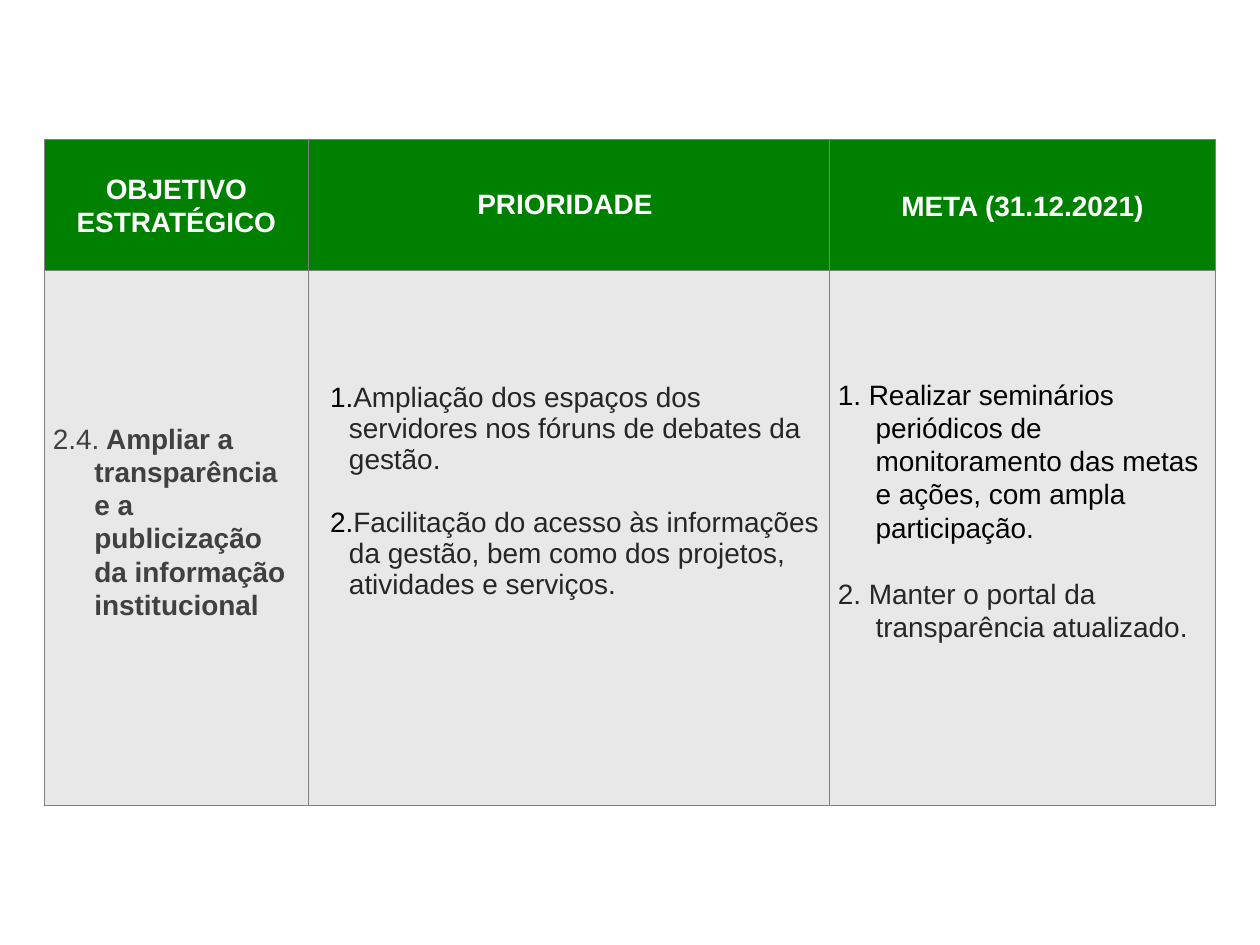
from dataclasses import dataclass

from lxml import etree
from pptx import Presentation
from pptx.dml.color import RGBColor
from pptx.enum.text import MSO_ANCHOR, PP_ALIGN
from pptx.oxml.ns import qn
from pptx.util import Inches, Pt

CENTER, LEFT = PP_ALIGN.CENTER, PP_ALIGN.LEFT
MIDDLE, TOP = MSO_ANCHOR.MIDDLE, MSO_ANCHOR.TOP


@dataclass(frozen=True)
class Theme:
    font: str = "Arial"
    size: float = 16
    border_width: float = 0.5
    line_spacing: float = 1.07
    header_fill: str = "008000"
    header_text: str = "FFFFFF"
    body_fill: str = "D9D9D9"
    body_opacity: int = 60
    border: str = "808080"
    objective: str = "404040"
    text: str = "262626"
    black: str = "000000"


THEME = Theme()
COLUMN_WIDTHS = (2.1, 4.13, 3.07)
ROW_HEIGHTS = (1.04, 4.24)
HEADERS = (
    ("OBJETIVO ESTRATÉGICO", THEME.line_spacing),
    ("PRIORIDADE ", 1),
    ("META (31.12.2021)", THEME.line_spacing),
)
PRIORITIES = (
    "Ampliação dos espaços dos servidores nos fóruns de debates da gestão.",
    "Facilitação do acesso às informações da gestão, bem como dos projetos, "
    "atividades e serviços.",
)
GOALS = (
    ("1. Realizar seminários periódicos de monitoramento das metas e ações, "
     "com ampla participação.", THEME.black),
    ("2. Manter o portal da transparência atualizado.", THEME.text),
)


def add_sub(parent, tag, **attributes):
    return etree.SubElement(parent, qn(tag), attributes)


def add_run(paragraph, text, *, color, bold=False):
    run = paragraph.add_run()
    run.text = text
    run.font.name = THEME.font
    run.font.size = Pt(THEME.size)
    run.font.bold = bold
    run.font.color.rgb = RGBColor.from_string(color)


def write(cell, text, *, color, bold=False, align=LEFT, spacing=THEME.line_spacing,
          gap=0, margin=0, hanging=0, numbered=False):
    """Add text as the cell's next paragraph and return that paragraph."""
    frame = cell.text_frame
    first = frame.paragraphs[0]
    paragraph = frame.add_paragraph() if first.runs else first
    if paragraph is not first:
        paragraph.space_before = Pt(gap)
    paragraph.alignment = align
    paragraph.line_spacing = spacing
    properties = paragraph._p.get_or_add_pPr()
    properties.set("marL", str(Inches(margin)))
    properties.set("indent", str(-Inches(hanging)))
    if numbered:
        add_sub(add_sub(properties, "a:buClr"), "a:srgbClr", val=THEME.black)
        add_sub(properties, "a:buFont", typeface=THEME.font)
        add_sub(properties, "a:buAutoNum", type="arabicPeriod")
    add_run(paragraph, text, color=color, bold=bold)
    return paragraph


def style_cell(cell, fill, opacity=100):
    cell.margin_left = cell.margin_right = Inches(0.07)
    cell.margin_top = cell.margin_bottom = 0
    cell.vertical_anchor = MIDDLE
    cell.fill.solid()
    cell.fill.fore_color.rgb = RGBColor.from_string(fill)
    properties = cell._tc.get_or_add_tcPr()
    if opacity < 100:
        fill_color = properties.find(qn("a:solidFill")).find(qn("a:srgbClr"))
        add_sub(fill_color, "a:alpha", val=str(opacity * 1000))
    # Borders come before the fill in the cell properties
    for position, side in enumerate(("L", "R", "T", "B")):
        line = add_sub(properties, f"a:ln{side}", w=str(Pt(THEME.border_width)))
        add_sub(add_sub(line, "a:solidFill"), "a:srgbClr", val=THEME.border)
        properties.insert(position, line)


def add_plan_table(slide):
    plan = slide.shapes.add_table(
        len(ROW_HEIGHTS), len(COLUMN_WIDTHS), Inches(0.35), Inches(1.11),
        Inches(sum(COLUMN_WIDTHS)), Inches(sum(ROW_HEIGHTS))).table
    for column, width in zip(plan.columns, COLUMN_WIDTHS):
        column.width = Inches(width)
    for row, height in zip(plan.rows, ROW_HEIGHTS):
        row.height = Inches(height)
    return plan


def main():
    presentation = Presentation()
    presentation.slide_width, presentation.slide_height = Inches(10), Inches(7.5)
    slide = presentation.slides.add_slide(presentation.slide_layouts[6])
    plan = add_plan_table(slide)

    # Header row
    for column, (heading, spacing) in enumerate(HEADERS):
        cell = plan.cell(0, column)
        style_cell(cell, THEME.header_fill)
        write(cell, heading, color=THEME.header_text, bold=True, align=CENTER,
              spacing=spacing)

    objective, priority, goal = plan.rows[1].cells
    for cell in (objective, priority, goal):
        style_cell(cell, THEME.body_fill, THEME.body_opacity)

    # Strategic objective, set a little above the middle
    objective.margin_right = Inches(0.1)
    objective.margin_bottom = Inches(0.26)
    label = write(objective, "2.4.", color=THEME.objective, margin=0.33, hanging=0.33)
    add_run(label, " Ampliar a transparência e a publicização da informação institucional",
            color=THEME.objective, bold=True)

    # Priorities, set above the middle
    priority.margin_bottom = Inches(0.74)
    for text in PRIORITIES:
        write(priority, text, color=THEME.text, spacing=1, gap=18, margin=0.25,
              hanging=0.15, numbered=True)

    # Goals start below the top of the row
    goal.vertical_anchor = TOP
    goal.margin_top = Inches(0.85)
    for text, color in GOALS:
        write(goal, text, color=color, gap=19, margin=0.3, hanging=0.3)

    presentation.save("out.pptx")


if __name__ == "__main__":
    main()
